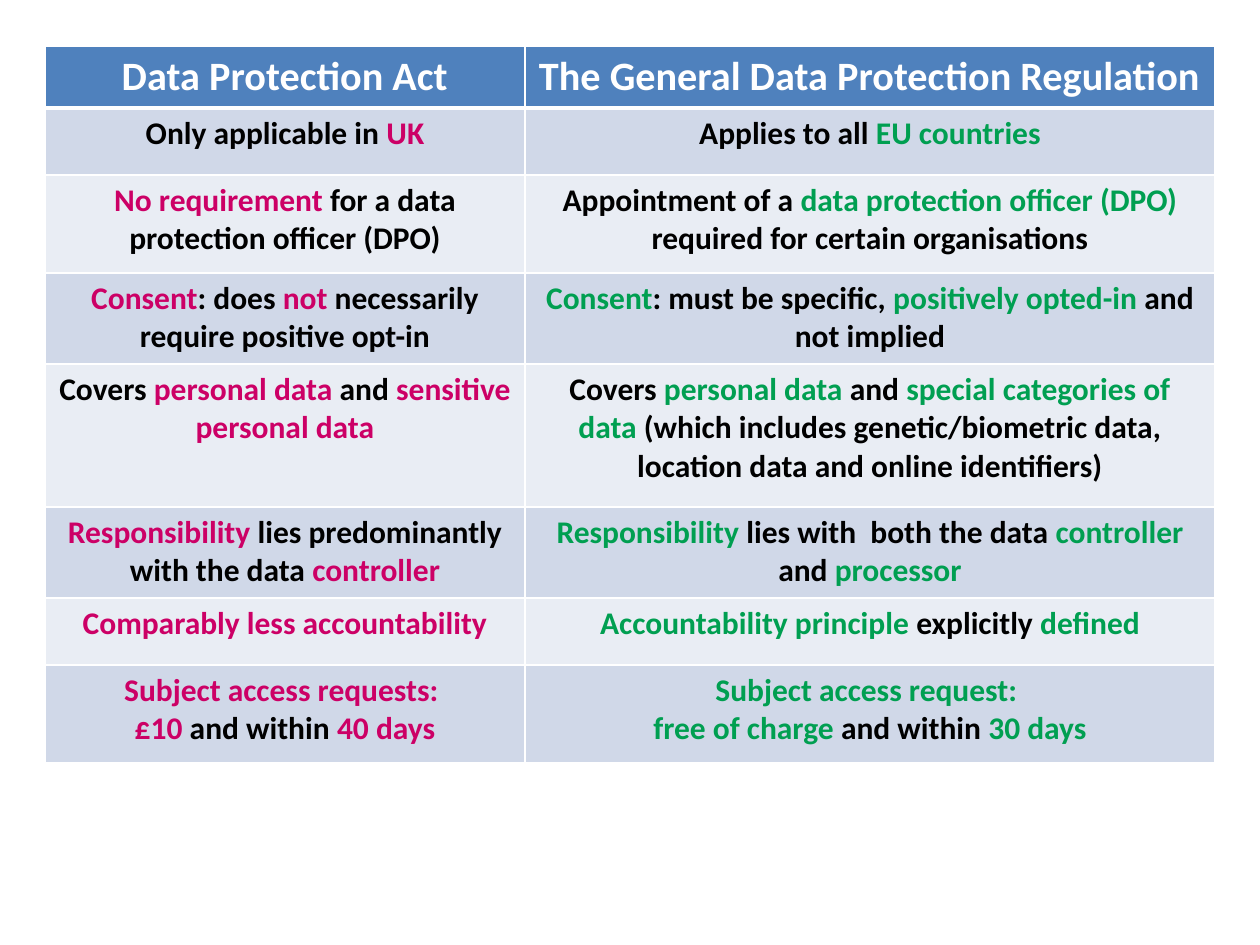
import pptx
import pptx.util
import pptx.dml.color
import pptx.enum.text
import pptx.oxml.ns
import lxml.etree

# Content: *stars* mark the words in the column's accent colour
HEADS = ("Data Protection Act", "The General Data Protection Regulation")
ROWS = [
    ("Only applicable in *UK*",
     "Applies to all *EU countries*"),
    ("*No requirement *for a data protection officer (DPO)",
     "Appointment of a *data protection officer (DPO) *required for certain organisations"),
    ("*Consent*: does *not* necessarily require positive opt-in",
     "*Consent*: must be specific, *positively opted-in *and not implied"),
    ("Covers *personal data *and *sensitive personal data*",
     "Covers *personal data *and *special categories of data* (which includes "
     "genetic/biometric data, location data and online identifiers)"),
    ("*Responsibility* lies predominantly with the data* controller*",
     "*Responsibility* lies with  both the data *controller* and *processor*"),
    ("*Comparably less accountability*",
     "*Accountability principle *explicitly* defined*"),
    ("*Subject access requests: \n£10 *and within *40 days*",
     "*Subject access request: \nfree of charge *and within *30 days*"),
]

# Layout in px
SCALE = 914400 // 126
PAGE = (1260, 945)
LEFT, TOP = 45, 46
WIDTHS = (480, 690)
HEIGHTS = (62, 67, 98, 91, 143, 91, 67, 98)

THEME = {
    "font": "Calibri",
    "head": 23, "body": 18,
    "white": "FFFFFF", "ink": "000000",
    "blue": "4F81BD", "bands": ("D0D8E8", "E9EDF4"),
    "accents": ("CC0066", "009F51"),
}


def px(n):
    return pptx.util.Emu(n * SCALE)


def rgb(code):
    return pptx.dml.color.RGBColor.from_string(code)


def write(cell, text, size, ink, accent=None):
    """Fill a cell with centred bold text, switching colour at each star."""
    para = cell.text_frame.paragraphs[0]
    para.alignment = pptx.enum.text.PP_ALIGN.CENTER
    for i, part in enumerate(text.split("*")):
        for j, line in enumerate(part.split("\n")):
            if j:
                para.add_line_break()
            if not line:
                continue
            run = para.add_run()
            run.text = line
            font = run.font
            font.name, font.bold = THEME["font"], True
            font.size = pptx.util.Pt(size)
            font.color.rgb = rgb(accent if i % 2 else ink)


def edge(cell, **sides):
    """Draw white borders; each side is given its width in points."""
    qn = pptx.oxml.ns.qn
    props = cell._tc.get_or_add_tcPr()
    for side, width in sides.items():
        line = lxml.etree.SubElement(props, qn("a:ln" + side),
                                     w=str(pptx.util.Pt(width)))
        fill = lxml.etree.SubElement(line, qn("a:solidFill"))
        lxml.etree.SubElement(fill, qn("a:srgbClr"), val=THEME["white"])


def paint(cell, color):
    cell.fill.solid()
    cell.fill.fore_color.rgb = rgb(color)


def main():
    deck = pptx.Presentation()
    deck.slide_width, deck.slide_height = map(px, PAGE)
    slide = deck.slides.add_slide(deck.slide_layouts[6])

    # Table grid
    table = slide.shapes.add_table(
        len(HEIGHTS), len(WIDTHS), px(LEFT), px(TOP),
        px(sum(WIDTHS)), px(sum(HEIGHTS))).table
    for col, width in zip(table.columns, WIDTHS):
        col.width = px(width)
    for row, height in zip(table.rows, HEIGHTS):
        row.height = px(height)

    # Header row
    for c, text in enumerate(HEADS):
        cell = table.cell(0, c)
        write(cell, text, size=THEME["head"], ink=THEME["white"])
        edge(cell, L=1, R=1, T=1, B=3)
        paint(cell, THEME["blue"])

    # Comparison rows in alternating bands
    for r, texts in enumerate(ROWS):
        for c, text in enumerate(texts):
            cell = table.cell(r + 1, c)
            write(cell, text, size=THEME["body"], ink=THEME["ink"],
                  accent=THEME["accents"][c])
            edge(cell, L=1, R=1, T=1 if r else 3, B=1)
            paint(cell, THEME["bands"][r % 2])

    deck.save("out.pptx")


if __name__ == "__main__":
    main()
